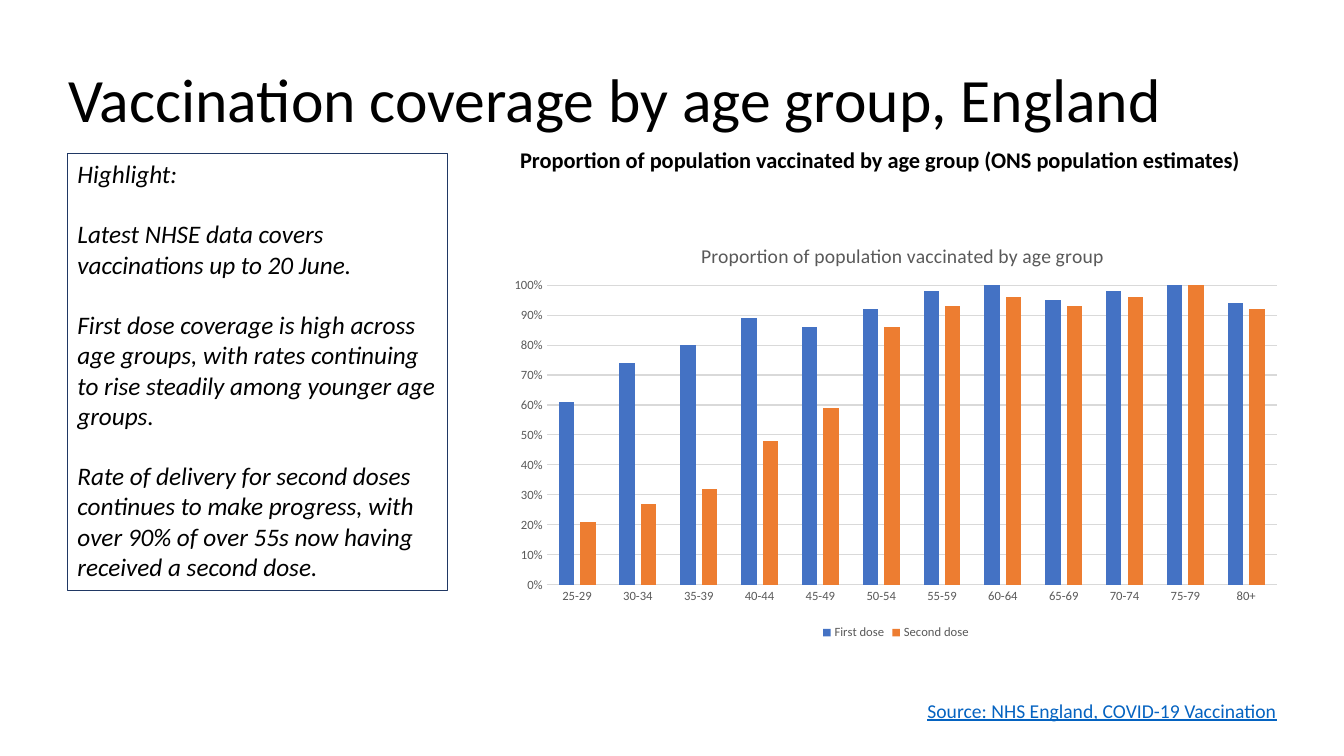
from lxml import etree
from pptx import Presentation
from pptx.chart.data import CategoryChartData
from pptx.dml.color import RGBColor
from pptx.enum.chart import XL_CHART_TYPE, XL_LEGEND_POSITION, XL_TICK_MARK
from pptx.enum.shapes import MSO_SHAPE
from pptx.enum.text import MSO_ANCHOR, PP_ALIGN
from pptx.oxml.ns import qn
from pptx.util import Inches, Pt

COLUMNS = XL_CHART_TYPE.COLUMN_CLUSTERED
LEGEND_BOTTOM = XL_LEGEND_POSITION.BOTTOM
NO_TICKS = XL_TICK_MARK.NONE
RECTANGLE = MSO_SHAPE.RECTANGLE
MIDDLE, TOP = MSO_ANCHOR.MIDDLE, MSO_ANCHOR.TOP
LEFT = PP_ALIGN.LEFT

FONT = "Calibri"
BLACK, GREY, PALE_GREY = "000000", "595959", "D9D9D9"
NAVY, LINK_BLUE = "203864", "0563C1"

HIGHLIGHTS = [
    "Highlight:",
    "Latest NHSE data covers vaccinations up to 20 June.",
    "First dose coverage is high across age groups, with rates continuing "
    "to rise steadily among younger age groups.",
    "Rate of delivery for second doses continues to make progress, with "
    "over 90% of over 55s now having received a second dose.",
]
AGE_GROUPS = [f"{age}-{age + 4}" for age in range(25, 80, 5)] + ["80+"]
DOSES = [
    ("First dose", "4472C4",
     [0.61, 0.74, 0.8, 0.89, 0.86, 0.92, 0.98, 1, 0.95, 0.98, 1.02, 0.94]),
    ("Second dose", "ED7D31",
     [0.21, 0.27, 0.32, 0.48, 0.59, 0.86, 0.93, 0.96, 0.93, 0.96, 1.01, 0.92]),
]


def color(value):
    return RGBColor.from_string(value)


def style_font(font, size, value=BLACK, bold=False, italic=False):
    font.name = FONT
    font.size = Pt(size)
    font.bold = bold
    font.italic = italic
    font.color.rgb = color(value)


def style_line(line, value):
    line.color.rgb = color(value)
    line.width = Pt(0.75)


def add_text(slide, box, text, size, value=BLACK, bold=False, wrap=False, anchor=TOP):
    shape = slide.shapes.add_textbox(*map(Inches, box))
    frame = shape.text_frame
    frame.word_wrap = wrap
    frame.vertical_anchor = anchor
    paragraph = frame.paragraphs[0]
    run = paragraph.add_run()
    run.text = text
    style_font(run.font, size, value, bold)
    return paragraph


def add_title(slide, box):
    paragraph = add_text(slide, box, "Vaccination coverage by age group, England", 44,
                         wrap=True, anchor=MIDDLE)
    paragraph.line_spacing = 0.9


def add_highlights(slide, box):
    shape = slide.shapes.add_shape(RECTANGLE, *map(Inches, box))
    shape.shadow.inherit = False
    shape.fill.background()
    style_line(shape.line, NAVY)
    frame = shape.text_frame
    frame.word_wrap = True
    frame.vertical_anchor = TOP
    for index, text in enumerate(HIGHLIGHTS):
        paragraph = frame.add_paragraph() if index else frame.paragraphs[0]
        paragraph.alignment = LEFT
        if index:
            paragraph.space_before = Pt(21.6)
        run = paragraph.add_run()
        run.text = text
        style_font(run.font, 18, italic=True)


def add_source(slide, box):
    paragraph = add_text(slide, box, "Source: NHS England, COVID-19 Vaccination", 14, LINK_BLUE)
    paragraph.runs[0].font.underline = True


def set_layout(element, position, settings):
    for old_layout in element.findall(qn("c:layout")):
        element.remove(old_layout)
    layout = etree.Element(qn("c:layout"))
    manual = etree.SubElement(layout, qn("c:manualLayout"))
    for name, value in settings:
        etree.SubElement(manual, qn(f"c:{name}")).set("val", str(value))
    element.insert(position, layout)


def style_axis(axis):
    axis.major_tick_mark = NO_TICKS
    axis.minor_tick_mark = NO_TICKS
    style_font(axis.tick_labels.font, 9, GREY)


def add_coverage_chart(slide, box):
    data = CategoryChartData(number_format="0%")
    data.categories = AGE_GROUPS
    for name, _, values in DOSES:
        data.add_series(name, values)
    chart = slide.shapes.add_chart(COLUMNS, *map(Inches, box), data).chart
    style_font(chart.font, 10)

    chart.has_title = True
    run = chart.chart_title.text_frame.paragraphs[0].add_run()
    run.text = "Proportion of population vaccinated by age group"
    style_font(run.font, 14, GREY)
    edges = [("xMode", "edge"), ("yMode", "edge")]
    set_layout(chart.chart_title._element, 1, edges + [("x", 0.25), ("y", 0.04)])
    plot_area = chart._chartSpace.chart.plotArea
    set_layout(plot_area, 0, [("layoutTarget", "inner")] + edges
               + [("x", 0.06), ("y", 0.15), ("w", 0.92), ("h", 0.71)])

    chart.has_legend = True
    chart.legend.position = LEGEND_BOTTOM
    chart.legend.include_in_layout = False
    style_font(chart.legend.font, 9, GREY)

    style_axis(chart.category_axis)
    style_line(chart.category_axis.format.line, PALE_GREY)
    value_axis = chart.value_axis
    style_axis(value_axis)
    value_axis.format.line.fill.background()
    value_axis.minimum_scale = 0
    value_axis.maximum_scale = 1
    value_axis.major_unit = 0.1
    value_axis.tick_labels.number_format = "0%"
    value_axis.tick_labels.number_format_is_linked = False
    style_line(value_axis.major_gridlines.format.line, PALE_GREY)

    plot = chart.plots[0]
    plot.vary_by_categories = False
    plot.gap_width = 156
    plot.overlap = -40
    for series, (_, value, _) in zip(plot.series, DOSES):
        series.format.fill.solid()
        series.format.fill.fore_color.rgb = color(value)


def main():
    presentation = Presentation()
    presentation.slide_width = Inches(13.33)
    presentation.slide_height = Inches(7.5)
    slide = presentation.slides.add_slide(presentation.slide_layouts[6])
    add_title(slide, (0.58, 0.29, 11.5, 1.45))
    add_highlights(slide, (0.67, 1.52, 3.77, 4.34))
    add_source(slide, (9.1, 6.88, 3.73, 0.34))
    add_text(slide, (5.06, 1.4, 7.38, 0.67),
             "Proportion of population vaccinated by age group (ONS population estimates)",
             16, bold=True)
    add_coverage_chart(slide, (4.95, 2.2, 7.87, 4.19))
    presentation.save("out.pptx")


if __name__ == "__main__":
    main()
